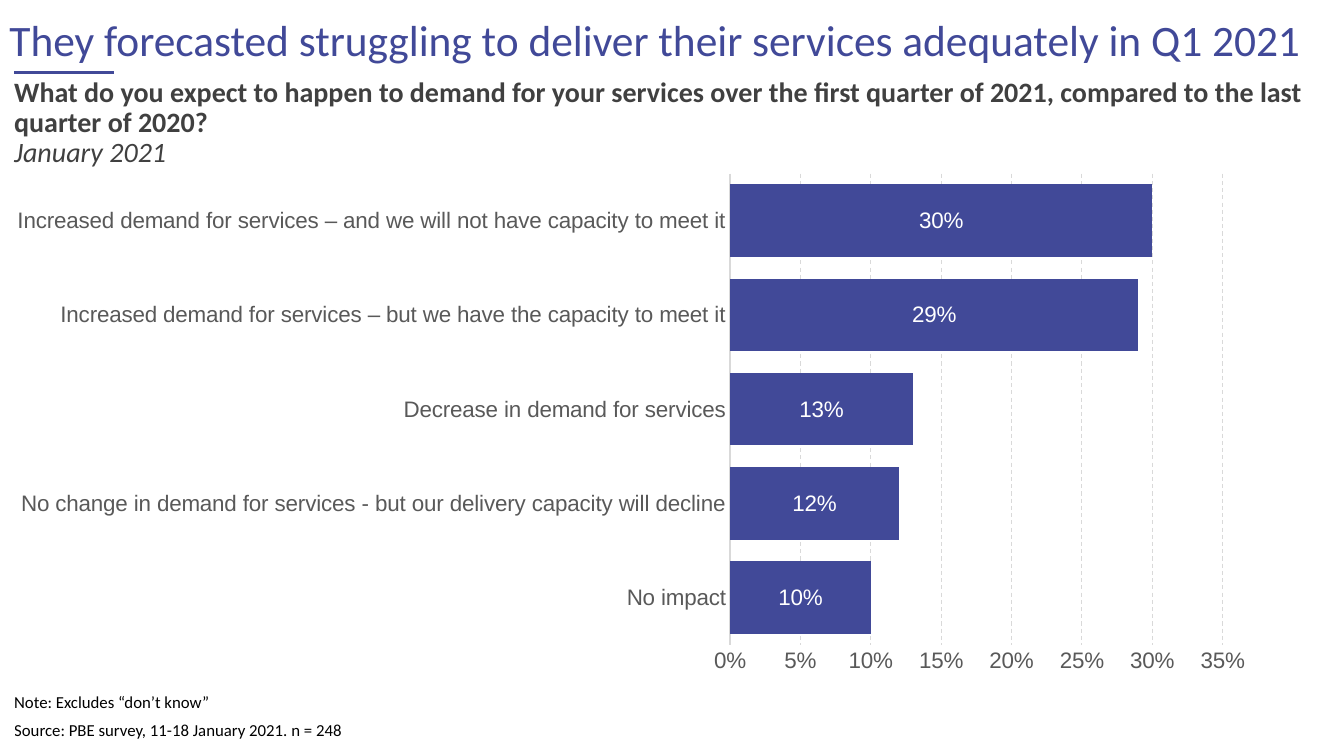
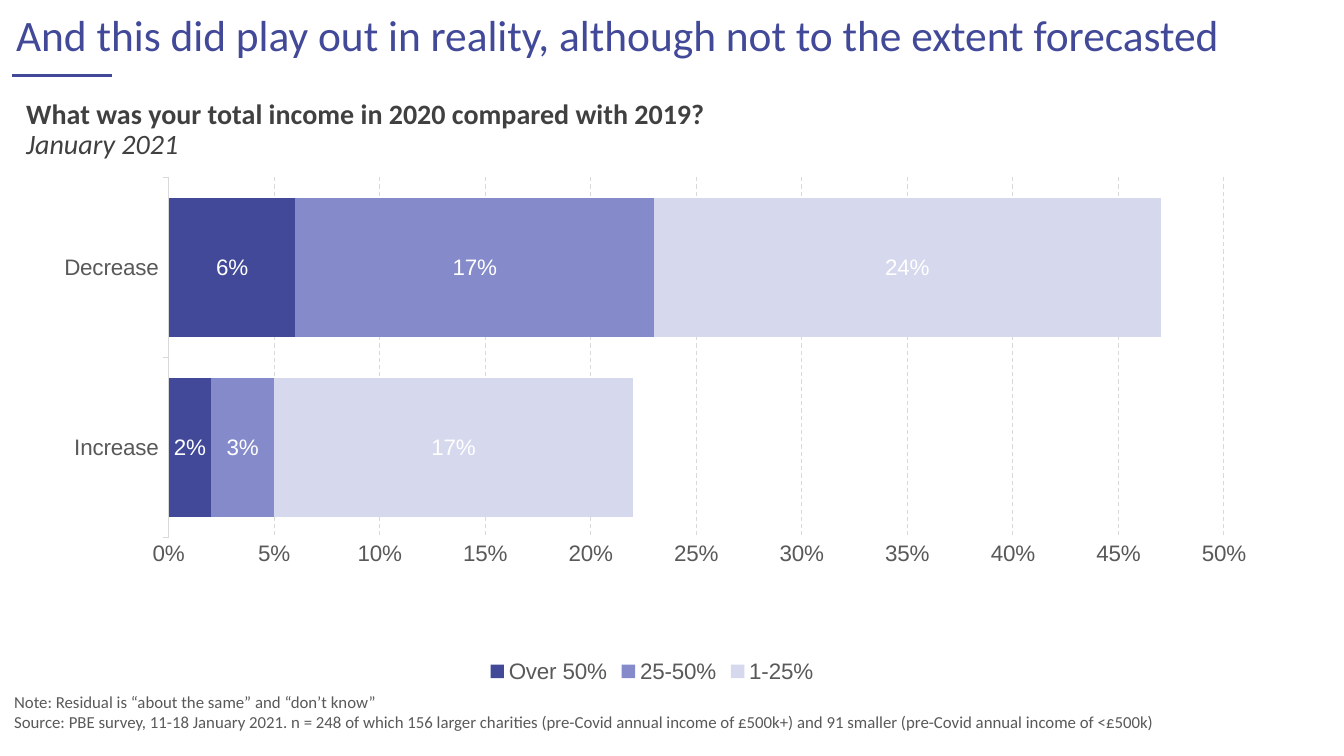
from dataclasses import dataclass

from pptx import Presentation
from pptx.chart.data import CategoryChartData
from pptx.dml.color import RGBColor
from pptx.enum.chart import XL_CHART_TYPE as Chart, XL_LABEL_POSITION as LabelPos
from pptx.enum.chart import XL_LEGEND_POSITION as LegendPos, XL_TICK_MARK as Tick
from pptx.enum.dml import MSO_LINE
from pptx.enum.shapes import MSO_CONNECTOR
from pptx.enum.text import MSO_ANCHOR as Anchor, MSO_AUTO_SIZE as AutoSize, PP_ALIGN as Align
from pptx.oxml import parse_xml
from pptx.oxml.ns import nsdecls, qn
from pptx.util import Inches, Pt


@dataclass(frozen=True)
class Theme:
    accent: str = "414998"
    mid: str = "848ACA"
    pale: str = "D6D8ED"
    heading: str = "404040"
    muted: str = "595959"
    grid: str = "D9D9D9"
    black: str = "000000"
    white: str = "FFFFFF"
    text_font: str = "Calibri"
    chart_font: str = "Arial"
    title_size: float = 31
    question_size: float = 20
    chart_size: float = 16
    source_size: float = 12


def style(font, name, size, color, bold=False, italic=False):
    font.name, font.size = name, Pt(size)
    font.bold, font.italic = bold, italic
    font.color.rgb = RGBColor.from_string(color)


class Deck:
    """Holds the theme and the current slide; boxes are percentages of the slide."""

    def __init__(self, theme):
        self.t = theme
        self.prs = Presentation()
        self.prs.slide_width, self.prs.slide_height = Inches(13.33), Inches(7.5)

    def box(self, x, y, w, h):
        sw, sh = self.prs.slide_width, self.prs.slide_height
        return [int(v / 100 * side) for v, side in zip((x, y, w, h), (sw, sh, sw, sh))]

    def new_slide(self):
        self.s = self.prs.slides.add_slide(self.prs.slide_layouts[1])

    def place(self, sp, box, anchor, inset=True):
        sp.left, sp.top, sp.width, sp.height = self.box(*box)
        tf = sp.text_frame
        tf.word_wrap, tf.auto_size, tf.vertical_anchor = True, AutoSize.NONE, anchor
        if not inset:
            tf.margin_left = tf.margin_right = tf.margin_top = tf.margin_bottom = 0
        return tf

    def title(self, text, box):
        tf = self.place(self.s.shapes.title, box, Anchor.TOP, inset=False)
        tf.text = text
        p = tf.paragraphs[0]
        p.alignment, p.line_spacing = Align.LEFT, 0.9
        style(p.runs[0].font, self.t.text_font, self.t.title_size, self.t.accent)

    def rule(self, x, y, length=7.4):
        left, top, width, _ = self.box(x, y, length, 0)
        line = self.s.shapes.add_connector(MSO_CONNECTOR.STRAIGHT, left, top, left + width, top)
        line.line.color.rgb = RGBColor.from_string(self.t.accent)
        line.line.width = Pt(2.25)
        line._element.spPr.append(parse_xml(f"<a:effectLst {nsdecls('a')}/>"))

    def question(self, text, date, box):
        tf = self.place(self.s.placeholders[1], box, Anchor.MIDDLE)
        tf.text = f"{text}\n{date}"
        for p, is_date in zip(tf.paragraphs, (False, True)):
            pPr = p._p.get_or_add_pPr()
            pPr.set("marL", "0")
            pPr.set("indent", "0")
            pPr.append(parse_xml(f"<a:buNone {nsdecls('a')}/>"))
            p.line_spacing, p.space_before = 0.9, Pt(0)
            style(p.runs[0].font, self.t.text_font, self.t.question_size, self.t.heading,
                  bold=not is_date, italic=is_date)

    def source_table(self, lines, box):
        table = self.s.shapes.add_table(len(lines), 1, *self.box(*box)).table
        table.first_row = table.horz_banding = False
        for row, text in zip(table.rows, lines):
            cell = row.cells[0]
            cell.fill.background()
            cell.vertical_anchor = Anchor.MIDDLE
            cell.margin_left = cell.margin_right = cell.margin_top = cell.margin_bottom = 0
            cell.text = text
            style(cell.text_frame.paragraphs[0].runs[0].font,
                  self.t.text_font, self.t.source_size, self.t.black)

    def source_text(self, lines, box):
        sp = self.s.shapes.add_textbox(*self.box(*box))
        tf = self.place(sp, box, Anchor.MIDDLE, inset=False)
        tf.text = "\n".join(lines)
        for p in tf.paragraphs:
            style(p.runs[0].font, self.t.text_font, self.t.source_size, self.t.muted)

    def bars(self, cats, series, box, top, stacked=False, layout=None):
        """Draw a bar chart; series maps a name to its values and colour."""
        data = CategoryChartData(number_format="0%")
        data.categories = cats
        for name, (values, _) in series.items():
            data.add_series(name, values)
        kind = Chart.BAR_STACKED if stacked else Chart.BAR_CLUSTERED
        chart = self.s.shapes.add_chart(kind, *self.box(*box), data).chart
        chart.has_title = False
        self.chart_font(chart.font, self.t.black)

        plot = chart.plots[0]
        plot.vary_by_categories = False
        plot.gap_width, plot.overlap = 30, 100 if stacked else 0
        for ser, (_, color) in zip(plot.series, series.values()):
            ser.invert_if_negative = False
            ser.format.fill.solid()
            ser.format.fill.fore_color.rgb = RGBColor.from_string(color)
        plot.has_data_labels = True
        labels = plot.data_labels
        labels.show_value, labels.position = True, LabelPos.CENTER
        labels.number_format, labels.number_format_is_linked = "0%", False
        self.chart_font(labels.font, self.t.white)

        self.axes(chart, top, Tick.OUTSIDE if stacked else Tick.NONE)
        chart.has_legend = stacked
        if stacked:
            chart.legend.position = LegendPos.BOTTOM
            chart.legend.include_in_layout = False
            self.chart_font(chart.legend.font, self.t.muted)
        if layout:
            self.plot_layout(chart, layout)

    def chart_font(self, font, color):
        style(font, self.t.chart_font, self.t.chart_size, color)

    def axes(self, chart, top, cat_tick):
        cat, val = chart.category_axis, chart.value_axis
        for axis, tick in ((cat, cat_tick), (val, Tick.NONE)):
            axis.major_tick_mark, axis.minor_tick_mark = tick, Tick.NONE
            self.chart_font(axis.tick_labels.font, self.t.muted)
        cat.has_major_gridlines, val.has_major_gridlines = False, True
        val.minimum_scale, val.maximum_scale, val.major_unit = 0, top, 0.05
        val.tick_labels.number_format = "0%"
        val.tick_labels.number_format_is_linked = False
        val.format.line.fill.background()
        grid = val.major_gridlines.format.line
        for line in (cat.format.line, grid):
            line.color.rgb = RGBColor.from_string(self.t.grid)
            line.width = Pt(0.75)
        grid.dash_style = MSO_LINE.DASH

    @staticmethod
    def plot_layout(chart, layout):
        """Fix the inner plot area as x, y, w, h shares of the chart."""
        area = chart.element.find(".//" + qn("c:plotArea"))
        for old in area.findall(qn("c:layout")):
            area.remove(old)
        sizes = "".join(f'<c:{tag} val="{v}"/>' for tag, v in zip("xywh", layout))
        area.insert(0, parse_xml(
            f"<c:layout {nsdecls('c')}><c:manualLayout><c:layoutTarget val=\"inner\"/>"
            f'<c:xMode val="edge"/><c:yMode val="edge"/>{sizes}'
            "</c:manualLayout></c:layout>"))


def forecast_slide(deck):
    deck.new_slide()
    deck.title("They forecasted struggling to deliver their services adequately in Q1 2021",
               (0.7, 2.5, 98.4, 12.7))
    deck.rule(1.05, 9.6)
    deck.question("What do you expect to happen to demand for your services over the first "
                  "quarter of 2021, compared to the last quarter of 2020?",
                  "January 2021", (0.3, 10.9, 99.7, 10.8))
    demand = {
        "No impact": 0.10,
        "No change in demand for services - but our delivery capacity will decline": 0.12,
        "Decrease in demand for services": 0.13,
        "Increased demand for services – but we have the capacity to meet it": 0.29,
        "Increased demand for services – and we will not have capacity to meet it": 0.30,
    }
    deck.bars(list(demand), {"Series 1": (list(demand.values()), deck.t.accent)},
              (0.7, 21.6, 93.8, 68.8), top=0.35)
    deck.source_table(["Note: Excludes “don’t know”",
                       "Source: PBE survey, 11-18 January 2021. n = 248"],
                      (1.05, 91.1, 66.1, 7.5))


def outcome_slide(deck):
    deck.new_slide()
    deck.title("And this did play out in reality, although not to the extent forecasted",
               (1.2, 1.9, 97.9, 12.7))
    deck.rule(0.9, 10)
    deck.source_text(["Note: Residual is “about the same” and “don’t know”",
                      "Source: PBE survey, 11-18 January 2021. n = 248 of which 156 larger "
                      "charities (pre-Covid annual income of £500k+) and 91 smaller "
                      "(pre-Covid annual income of <£500k)"],
                     (1.05, 91.5, 86, 5.4))
    deck.question("What was your total income in 2020 compared with 2019?",
                  "January 2021", (1.2, 13, 97.9, 8.4))
    deck.bars(["Increase", "Decrease"],
              {"Over 50%": ([0.02, 0.06], deck.t.accent),
               "25-50%": ([0.03, 0.17], deck.t.mid),
               "1-25%": ([0.17, 0.24], deck.t.pale)},
              (1.2, 19.9, 94.6, 71.1), top=0.5, stacked=True,
              layout=(0.12, 0.05, 0.83, 0.67))


def main():
    deck = Deck(Theme())
    forecast_slide(deck)
    outcome_slide(deck)
    deck.prs.save("out.pptx")


if __name__ == "__main__":
    main()
